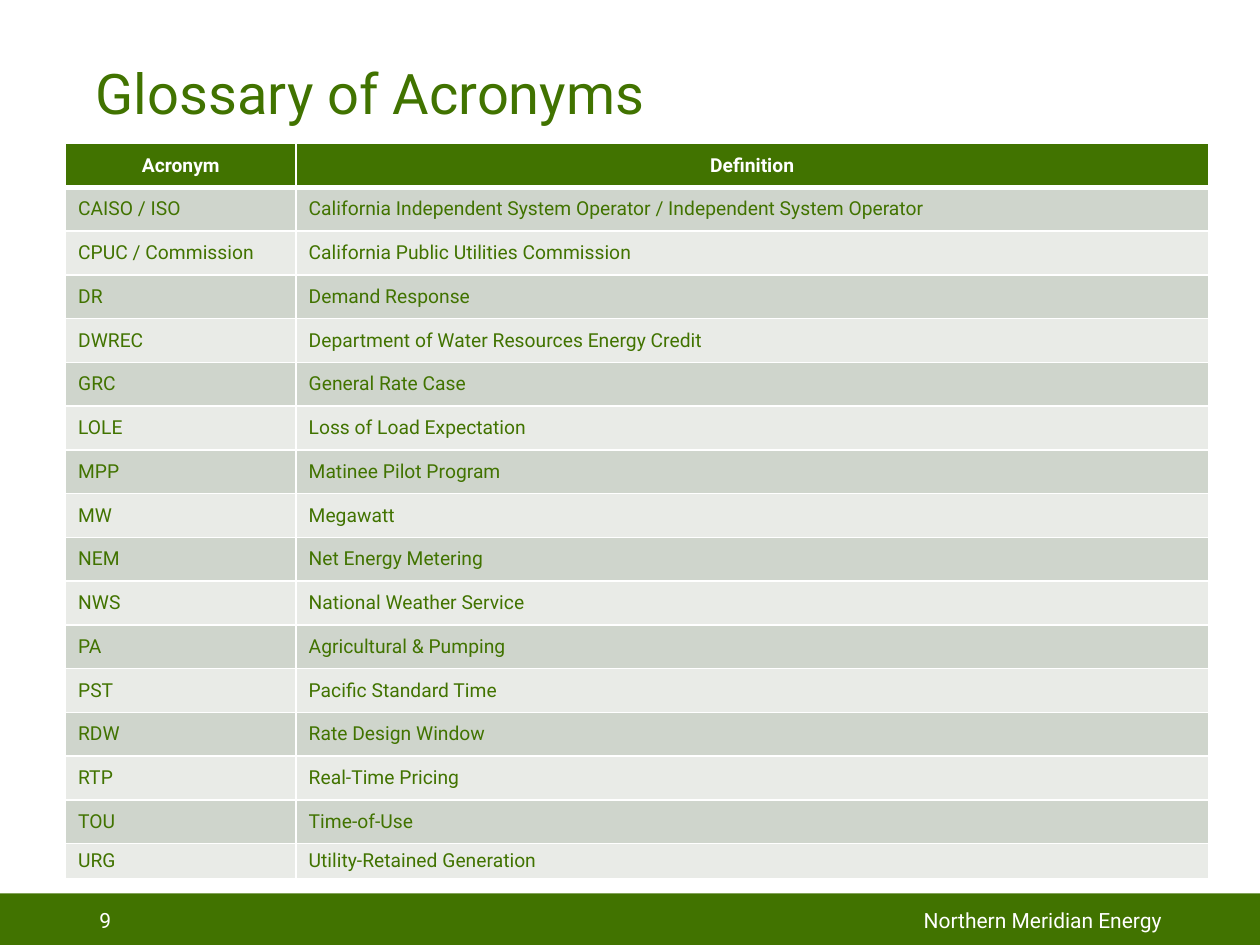
import pptx
import pptx.dml.color
import pptx.enum.shapes
import pptx.enum.text
import pptx.oxml
import pptx.oxml.ns
import pptx.util
from pptx.util import Inches

ALIGN = pptx.enum.text.PP_ALIGN
MIDDLE = pptx.enum.text.MSO_ANCHOR.MIDDLE

GLOSSARY = [
    ("CAISO / ISO", "California Independent System Operator / Independent System Operator"),
    ("CPUC / Commission", "California Public Utilities Commission"),
    ("DR", "Demand Response"),
    ("DWREC", "Department of Water Resources Energy Credit"),
    ("GRC", "General Rate Case"),
    ("LOLE", "Loss of Load Expectation"),
    ("MPP", "Matinee Pilot Program"),
    ("MW", "Megawatt"),
    ("NEM", "Net Energy Metering"),
    ("NWS", "National Weather Service"),
    ("PA", "Agricultural & Pumping"),
    ("PST", "Pacific Standard Time"),
    ("RDW", "Rate Design Window"),
    ("RTP", "Real-Time Pricing"),
    ("TOU", "Time-of-Use"),
    ("URG", "Utility-Retained Generation"),
]


def rgb(color):
    return pptx.dml.color.RGBColor.from_string(color)


def write(tf, text, size, color, font="Roboto", bold=False, align=ALIGN.LEFT, spacing=None):
    p = tf.paragraphs[0]
    p.alignment = align
    p.line_spacing = spacing
    r = p.add_run()
    r.text = text
    r.font.name = font
    r.font.size = pptx.util.Pt(size)
    r.font.bold = bold
    r.font.color.rgb = rgb(color)


def set_borders(cell, color, **widths):
    """Draw solid cell borders; widths are points keyed by side (L, R, T, B)."""
    tcPr = cell._tc.get_or_add_tcPr()
    for i, (side, width) in enumerate(widths.items()):
        tcPr.insert(i, pptx.oxml.parse_xml(
            f'<a:ln{side} {pptx.oxml.ns.nsdecls("a")} w="{pptx.util.Pt(width)}">'
            f'<a:solidFill><a:srgbClr val="{color}"/></a:solidFill></a:ln{side}>'))


class GlossarySlide:
    green = "417300"
    white = "FFFFFF"
    bands = ("CFD5CC", "E9EBE7")

    def __init__(self, prs):
        self.s = prs.slides.add_slide(prs.slide_layouts[5])

    def title(self, text, *box):
        sp = self.s.shapes.title
        sp.left, sp.top, sp.width, sp.height = map(Inches, box)
        tf = sp.text_frame
        tf.vertical_anchor = MIDDLE
        tf.auto_size = pptx.enum.text.MSO_AUTO_SIZE.NONE
        write(tf, text, 32, self.green, spacing=0.9)

    def bar(self, *box):
        sp = self.s.shapes.add_shape(
            pptx.enum.shapes.MSO_SHAPE.RECTANGLE, *map(Inches, box))
        sp.shadow.inherit = False
        sp.fill.solid()
        sp.fill.fore_color.rgb = rgb(self.green)
        sp.line.fill.background()

    def footer_text(self, text, *box, align=ALIGN.LEFT):
        tf = self.s.shapes.add_textbox(*map(Inches, box)).text_frame
        tf.word_wrap = True
        tf.vertical_anchor = MIDDLE
        write(tf, text, 12, self.white, align=align)

    def table(self, header, entries, left, top, col_widths, height, last_height):
        rows = [header, *entries]
        table = self.s.shapes.add_table(
            len(rows), len(header), Inches(left), Inches(top),
            Inches(sum(col_widths)), Inches(height)).table
        for column, width in zip(table.columns, col_widths):
            column.width = Inches(width)
        for row in table.rows:
            row.height = Inches((height - last_height) / len(entries))
        table.rows[len(entries)].height = Inches(last_height)
        for i, row in enumerate(rows):
            for j, text in enumerate(row):
                self.cell(table.cell(i, j), text, i)

    def cell(self, cell, text, row):
        is_header = row == 0
        cell.fill.solid()
        cell.fill.fore_color.rgb = rgb(self.green if is_header else self.bands[(row - 1) % 2])
        cell.vertical_anchor = MIDDLE
        write(cell.text_frame, text, 11, self.white if is_header else self.green,
              bold=is_header, align=ALIGN.CENTER if is_header else ALIGN.LEFT)
        set_borders(cell, self.white, L=1, R=1, T=3 if row == 1 else 1, B=3 if is_header else 1)


def main():
    prs = pptx.Presentation()
    prs.slide_width, prs.slide_height = Inches(10), Inches(7.5)
    slide = GlossarySlide(prs)
    slide.bar(0, 7.09, 10, 0.41)
    slide.title("Glossary of Acronyms", 0.66, 0.43, 8.62, 0.67)
    slide.table(("Acronym", "Definition"), GLOSSARY, 0.52, 1.14,
                col_widths=(1.83, 7.24), height=5.84, last_height=0.28)
    slide.footer_text("9", 0.69, 7.1, 2.25, 0.4)
    slide.footer_text("Northern Meridian Energy", 5.94, 7.1, 3.38, 0.4, align=ALIGN.RIGHT)
    prs.save("out.pptx")


if __name__ == "__main__":
    main()
